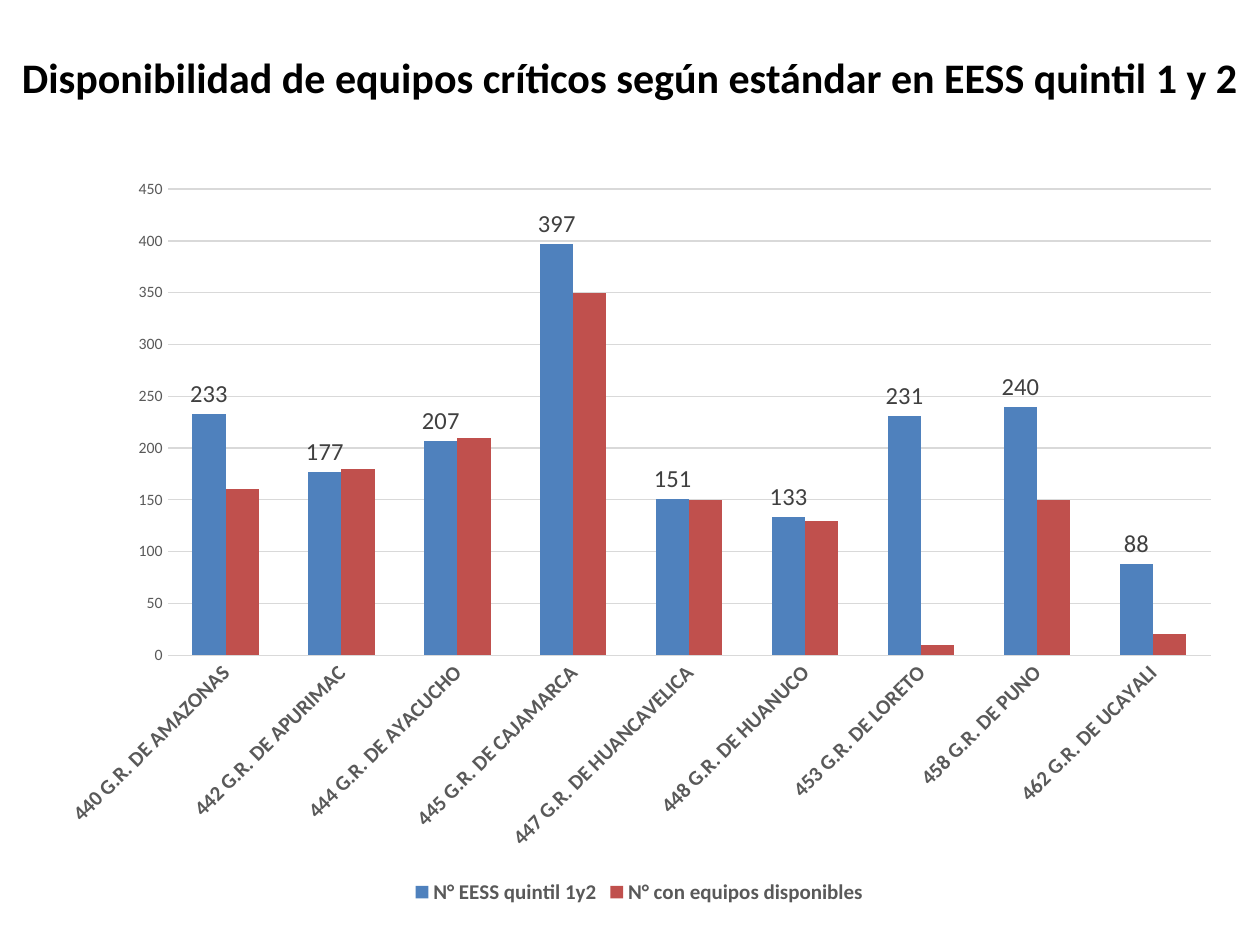
from pptx import Presentation
from pptx.chart.data import CategoryChartData
from pptx.dml.color import RGBColor
from pptx.enum import chart as charts, shapes, text
from pptx.util import Inches, Pt

FONT = "Calibri"
GREY = "595959"
REGIONS = [
    "440 G.R. DE AMAZONAS", "442 G.R. DE APURIMAC", "444 G.R. DE AYACUCHO",
    "445 G.R. DE CAJAMARCA", "447 G.R. DE HUANCAVELICA", "448 G.R. DE HUANUCO",
    "453 G.R. DE LORETO", "458 G.R. DE PUNO", "462 G.R. DE UCAYALI",
]
# Name, colour and values of each series
SERIES = [
    ("N° EESS quintil 1y2", "4F81BD", [233, 177, 207, 397, 151, 133, 231, 240, 88]),
    ("N° con equipos disponibles", "C0504D", [160, 180, 210, 350, 150, 130, 10, 150, 20]),
]


def color(value):
    return RGBColor.from_string(value)


def set_font(font, size, value, bold=False):
    font.name, font.size, font.bold = FONT, Pt(size), bold
    font.color.rgb = color(value)


def add_title(page, words):
    box = page.shapes.add_shape(shapes.MSO_SHAPE.RECTANGLE,
                                Inches(0), Inches(0.14), Inches(10), Inches(0.93))
    box.shadow.inherit = False
    box.fill.solid()
    box.fill.fore_color.rgb = color("FFFFFF")
    box.line.fill.background()
    frame = box.text_frame
    frame.word_wrap = True
    frame.vertical_anchor = text.MSO_ANCHOR.MIDDLE
    para = frame.paragraphs[0]
    para.text = words
    para.alignment = text.PP_ALIGN.CENTER
    set_font(para.font, 24, "000000", bold=True)


def style_axis(axis, size, bold=False):
    axis.major_tick_mark = axis.minor_tick_mark = charts.XL_TICK_MARK.NONE
    axis.format.line.fill.background()
    set_font(axis.tick_labels.font, size, GREY, bold)


def add_labels(series):
    labels = series.data_labels
    labels.show_value = True
    labels.position = charts.XL_LABEL_POSITION.OUTSIDE_END
    labels.number_format, labels.number_format_is_linked = "#,##0", False
    set_font(labels.font, 14, "404040")


def add_column_chart(page):
    data = CategoryChartData(number_format="#,##0")
    data.categories = REGIONS
    for name, _, values in SERIES:
        data.add_series(name, values)
    chart = page.shapes.add_chart(charts.XL_CHART_TYPE.COLUMN_CLUSTERED,
                                  Inches(0.35), Inches(1.31),
                                  Inches(9.45), Inches(5.91), data).chart
    chart.has_title = False
    set_font(chart.font, 10, "000000")

    # Columns
    plot = chart.plots[0]
    plot.gap_width, plot.overlap, plot.vary_by_categories = 150, 0, False
    for series, (_, fill, _) in zip(plot.series, SERIES):
        series.format.fill.solid()
        series.format.fill.fore_color.rgb = color(fill)
        series.invert_if_negative = False
    add_labels(plot.series[0])

    # Axes, with slanted region names
    style_axis(chart.category_axis, 12, bold=True)
    chart.category_axis._element.txPr.bodyPr.set("rot", "-2700000")
    scale = chart.value_axis
    style_axis(scale, 9)
    scale.minimum_scale, scale.maximum_scale, scale.major_unit = 0, 450, 50
    scale.tick_labels.number_format = "#,##0"
    scale.tick_labels.number_format_is_linked = False
    grid = scale.major_gridlines.format.line
    grid.color.rgb, grid.width = color("D9D9D9"), Pt(0.75)

    # Legend
    chart.has_legend = True
    chart.legend.position = charts.XL_LEGEND_POSITION.BOTTOM
    chart.legend.include_in_layout = False
    set_font(chart.legend.font, 12, GREY, bold=True)


def main():
    deck = Presentation()
    deck.slide_width, deck.slide_height = Inches(10), Inches(7.5)
    page = deck.slides.add_slide(deck.slide_layouts[6])
    add_title(page, "Disponibilidad de equipos críticos según estándar en EESS quintil 1 y 2")
    add_column_chart(page)
    deck.save("out.pptx")


if __name__ == "__main__":
    main()
